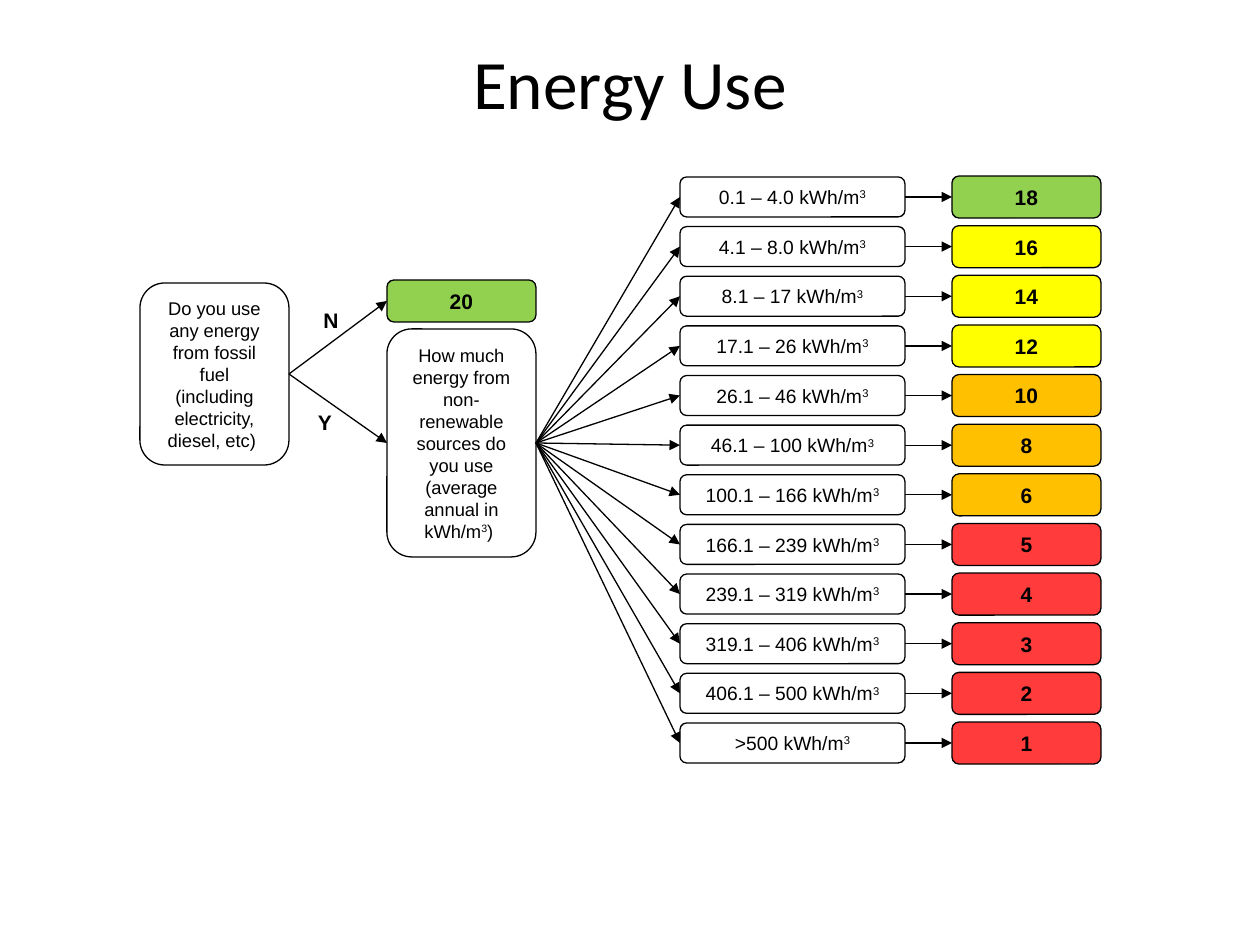
from lxml.etree import SubElement
from pptx import Presentation
from pptx.dml.color import RGBColor
from pptx.enum.shapes import MSO_CONNECTOR as Connector, MSO_SHAPE as Shape
from pptx.enum.text import MSO_ANCHOR as Anchor, PP_ALIGN as Align
from pptx.oxml.ns import qn
from pptx.util import Pt

SCALE = 914400 / 126
LEFT_SITE, RIGHT_SITE = 1, 3
GREEN, YELLOW, ORANGE, RED = "92D050", "FFFF00", "FFC000", "FF3B3B"
LEVELS = [
    ("0.1 – 4.0 kWh/m", "18", GREEN),
    ("4.1 – 8.0 kWh/m", "16", YELLOW),
    ("8.1 – 17 kWh/m", "14", YELLOW),
    ("17.1 – 26 kWh/m", "12", YELLOW),
    ("26.1 – 46 kWh/m", "10", ORANGE),
    ("46.1 – 100 kWh/m", "8", ORANGE),
    ("100.1 – 166 kWh/m", "6", ORANGE),
    ("166.1 – 239 kWh/m", "5", RED),
    ("239.1 – 319 kWh/m", "4", RED),
    ("319.1 – 406 kWh/m", "3", RED),
    ("406.1 – 500 kWh/m", "2", RED),
    (">500 kWh/m", "1", RED),
]
FIRST_MIDDLE, LAST_MIDDLE = 197, 743


def px(length):
    return round(length * SCALE)


def color(value):
    return RGBColor.from_string(value)


class FlowSlide:
    ink = "000000"
    paper = "FFFFFF"
    line_width = Pt(0.75)

    def __init__(self, deck):
        self.shapes = deck.slides.add_slide(deck.slide_layouts[6]).shapes

    def add_text(self, box, runs, size, bold=False, font="Arial"):
        frame = box.text_frame
        frame.word_wrap = True
        frame.vertical_anchor = Anchor.MIDDLE
        para = frame.paragraphs[0]
        para.alignment = Align.CENTER
        for index, text in enumerate(runs):
            span = para.add_run()
            span.text = text
            span.font.name = font
            span.font.size = Pt(size)
            span.font.bold = bold
            span.font.color.rgb = color(self.ink)
            if index == 1:
                span._r.get_or_add_rPr().set("baseline", "30000")

    def label(self, left, top, width, height, text, size, **style):
        box = self.shapes.add_textbox(px(left), px(top), px(width), px(height))
        self.add_text(box, [text], size, **style)

    def box(self, left, middle, width, height, runs, size, fill=paper, bold=False):
        box = self.shapes.add_shape(
            Shape.FLOWCHART_ALTERNATE_PROCESS,
            px(left), px(middle - height / 2), px(width), px(height),
        )
        box.shadow.inherit = False
        box.fill.solid()
        box.fill.fore_color.rgb = color(fill)
        box.line.color.rgb = color(self.ink)
        box.line.width = self.line_width
        self.add_text(box, runs, size, bold)
        return box

    def question(self, left, middle, height, runs):
        return self.box(left, middle, 149, height, runs, 10.5)

    def score(self, left, middle, text, fill):
        return self.box(left, middle, 149, 42, [text], 12, fill, bold=True)

    def usage(self, left, middle, text):
        return self.box(left, middle, 225, 40, [text, "3"], 11)

    def arrow(self, source, target):
        arrow = self.shapes.add_connector(Connector.STRAIGHT, 0, 0, 0, 0)
        arrow.begin_connect(source, RIGHT_SITE)
        arrow.end_connect(target, LEFT_SITE)
        arrow.line.color.rgb = color(self.ink)
        arrow.line.width = self.line_width
        SubElement(arrow.line._get_or_add_ln(), qn("a:tailEnd"), type="triangle")
        SubElement(arrow._element.spPr, qn("a:effectLst"))


def main():
    deck = Presentation()
    deck.slide_width, deck.slide_height = px(1260), px(945)
    page = FlowSlide(deck)

    page.label(63, 38, 1134, 87, "Energy Use", 39.6, font="Calibri")
    page.label(306, 301, 50, 38, "N", 12, bold=True)
    page.label(300, 403, 50, 38, "Y", 12, bold=True)

    fossil = page.question(140, 374, 182, [
        "Do you use any energy from fossil fuel (including electricity, diesel, etc) ",
    ])
    no_fossil = page.score(387, 301, "20", GREEN)
    amount = page.question(387, 443, 228, [
        "How much energy from non-renewable sources do you use (average annual in kWh/m",
        "3",
        ") ",
    ])
    page.arrow(fossil, no_fossil)
    page.arrow(fossil, amount)

    pitch = (LAST_MIDDLE - FIRST_MIDDLE) / (len(LEVELS) - 1)
    for row, (text, points, fill) in enumerate(LEVELS):
        middle = FIRST_MIDDLE + row * pitch
        usage = page.usage(680, middle, text)
        score = page.score(952, middle, points, fill)
        page.arrow(amount, usage)
        page.arrow(usage, score)

    deck.save("out.pptx")


if __name__ == "__main__":
    main()
